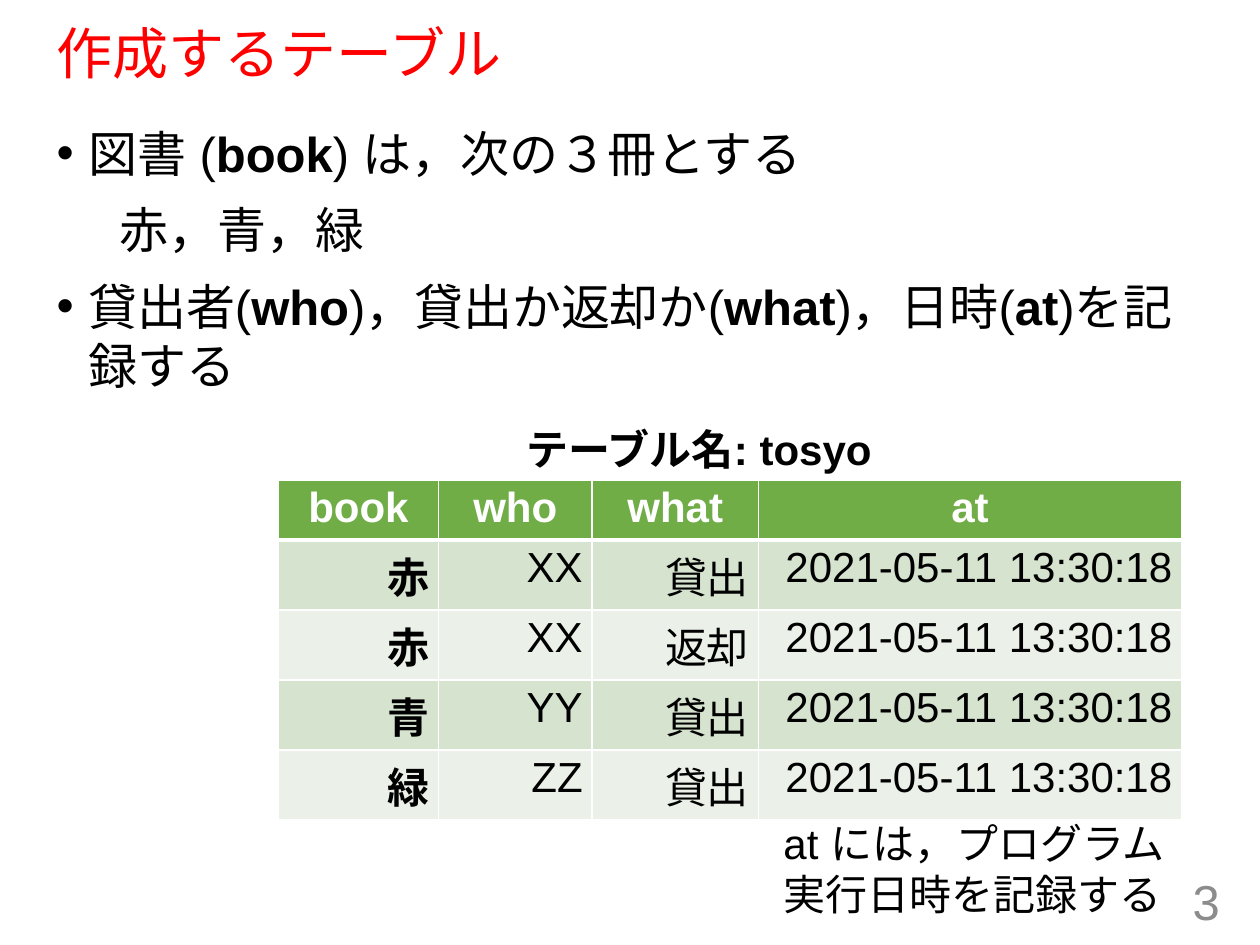
from dataclasses import dataclass

from lxml import etree
from pptx import Presentation
from pptx import util as u
from pptx.dml.color import RGBColor
from pptx.enum import lang, text
from pptx.oxml import ns


@dataclass(frozen=True)
class Theme:
    font: str = "Arial"
    title: str = "FF0000"
    ink: str = "000000"
    number: str = "8C8C8C"
    header_ink: str = "FFFFFF"
    header_fill: str = "70AD47"
    rule: str = "FFFFFF"
    bands: tuple = ("D5E3CF", "EBF1E9")
    title_size: int = 32
    body_size: int = 28
    small_size: int = 24


THEME = Theme()
WIDTH, HEIGHT = u.Inches(10), u.Inches(7.5)
COLUMNS, ROWS = 100, 75

LIST_ITEMS = [
    ("•", ["図書 (", "book", ") は，次の３冊とする"]),
    (None, ["\t赤，青，緑"]),
    ("•", ["貸出者(", "who", ")，貸出か返却か(", "what", ")，日時(", "at", ")を記録する"]),
]
RECORDED_AT = "2021-05-11 13:30:18"
HEADERS = ["book", "who", "what", "at"]
LOANS = [
    ("赤", "XX", "貸出"),
    ("赤", "XX", "返却"),
    ("青", "YY", "貸出"),
    ("緑", "ZZ", "貸出"),
]


def across(columns):
    return round(WIDTH * columns / COLUMNS)


def down(rows):
    return round(HEIGHT * rows / ROWS)


def area(left, top, width, height):
    return across(left), down(top), across(width), down(height)


def apply(target, values):
    for name, value in values.items():
        setattr(target, name, value)


def write(paragraph, words, size, color, bold=False, east_asian=True):
    run = paragraph.add_run()
    run.text = words
    apply(run.font, {
        "name": THEME.font,
        "size": u.Pt(size),
        "bold": bold,
        "language_id": lang.MSO_LANGUAGE_ID.JAPANESE,
    })
    run.font.color.rgb = RGBColor.from_string(color)
    if east_asian:
        etree.SubElement(run.font._element, ns.qn("a:ea"), typeface=THEME.font)


def set_bullet(paragraph, mark):
    properties = paragraph._p.get_or_add_pPr()
    hang = u.Inches(0.25) if mark else 0
    properties.set("marL", str(hang))
    properties.set("indent", str(-hang))
    if mark:
        etree.SubElement(properties, ns.qn("a:buFont"), typeface=THEME.font)
        etree.SubElement(properties, ns.qn("a:buChar"), char=mark)
    else:
        etree.SubElement(properties, ns.qn("a:buNone"))
        stops = etree.SubElement(properties, ns.qn("a:tabLst"))
        etree.SubElement(stops, ns.qn("a:tab"), pos=str(across(10)), algn="l")


def place(placeholder, bounds, anchor):
    apply(placeholder, dict(zip(("left", "top", "width", "height"), area(*bounds))))
    apply(placeholder.text_frame, {
        "word_wrap": True,
        "auto_size": text.MSO_AUTO_SIZE.NONE,
        "vertical_anchor": anchor,
    })
    return placeholder.text_frame


def add_title(slide, words):
    frame = place(slide.shapes.title, (3.5, 1.9, 92.5, 5.1), text.MSO_ANCHOR.MIDDLE)
    heading = frame.paragraphs[0]
    apply(heading, {"alignment": text.PP_ALIGN.LEFT, "line_spacing": 0.9})
    write(heading, words, THEME.title_size, THEME.title)


def add_list(slide, items):
    frame = place(slide.placeholders[1], (3.5, 9.3, 92.5, 58.3), text.MSO_ANCHOR.TOP)
    for index, (mark, pieces) in enumerate(items):
        item = frame.add_paragraph() if index else frame.paragraphs[0]
        item.space_before = u.Pt(10 if index else 0)
        set_bullet(item, mark)
        for position, piece in enumerate(pieces):
            write(item, piece, THEME.body_size, THEME.ink, bold=position % 2 == 1)


def add_label(slide, bounds, lines, size, color, bold=False, wrap=False,
              align=text.PP_ALIGN.LEFT, anchor=text.MSO_ANCHOR.TOP):
    frame = slide.shapes.add_textbox(*area(*bounds)).text_frame
    apply(frame, {"word_wrap": wrap, "vertical_anchor": anchor})
    for index, line in enumerate(lines):
        paragraph = frame.add_paragraph() if index else frame.paragraphs[0]
        paragraph.alignment = align
        write(paragraph, line, size, color, bold)


def rule_cell(cell, widths):
    properties = cell._tc.get_or_add_tcPr()
    for index, (side, width) in enumerate(widths.items()):
        line = etree.Element(ns.qn(f"a:ln{side}"), w=str(u.Pt(width)))
        fill = etree.SubElement(line, ns.qn("a:solidFill"))
        etree.SubElement(fill, ns.qn("a:srgbClr"), val=THEME.rule)
        properties.insert(index, line)


def fill_cell(cell, words, fill, color, align, header, bold):
    apply(cell, {
        "margin_left": u.Pt(5.4),
        "margin_right": u.Pt(5.4),
        "margin_top": u.Pt(2.7),
        "margin_bottom": u.Pt(2.7),
    })
    cell.fill.solid()
    cell.fill.fore_color.rgb = RGBColor.from_string(fill)
    paragraph = cell.text_frame.paragraphs[0]
    paragraph.alignment = align
    write(paragraph, words, THEME.small_size, color, bold, east_asian=header)


def add_loan_table(slide):
    records = [HEADERS] + [(*loan, RECORDED_AT) for loan in LOANS]
    table = slide.shapes.add_table(
        len(records), len(HEADERS), *area(22.1, 38.1, 71.7, 26.6)).table
    for column, width in zip(table.columns, (12.7, 12.2, 13.2, 33.6)):
        column.width = across(width)
    for r, record in enumerate(records):
        table.rows[r].height = down(5.56 if r else 4.4)
        for c, words in enumerate(record):
            cell = table.cell(r, c)
            if r:
                look = (THEME.bands[(r - 1) % 2], THEME.ink, text.PP_ALIGN.RIGHT, False, c == 0)
            else:
                look = (THEME.header_fill, THEME.header_ink, text.PP_ALIGN.CENTER, True, True)
            fill_cell(cell, words, *look)
            rule_cell(cell, {"L": 1, "R": 1, "T": 3 if r == 1 else 1, "B": 1 if r else 3})


def main():
    deck = Presentation()
    apply(deck, {"slide_width": WIDTH, "slide_height": HEIGHT})
    slide = deck.slides.add_slide(deck.slide_layouts[1])
    add_title(slide, "作成するテーブル")
    add_list(slide, LIST_ITEMS)
    add_label(slide, (75.3, 69.5, 22.5, 4), ["3"], THEME.body_size, THEME.number,
              wrap=True, align=text.PP_ALIGN.RIGHT, anchor=text.MSO_ANCHOR.MIDDLE)
    add_loan_table(slide)
    add_label(slide, (61.2, 64.4, 36.6, 9.1), ["at には，プログラム", "実行日時を記録する"],
              THEME.small_size, THEME.ink)
    add_label(slide, (40.8, 33.1, 32, 5), ["テーブル名: tosyo"],
              THEME.small_size, THEME.ink, bold=True)
    deck.save("out.pptx")


if __name__ == "__main__":
    main()
